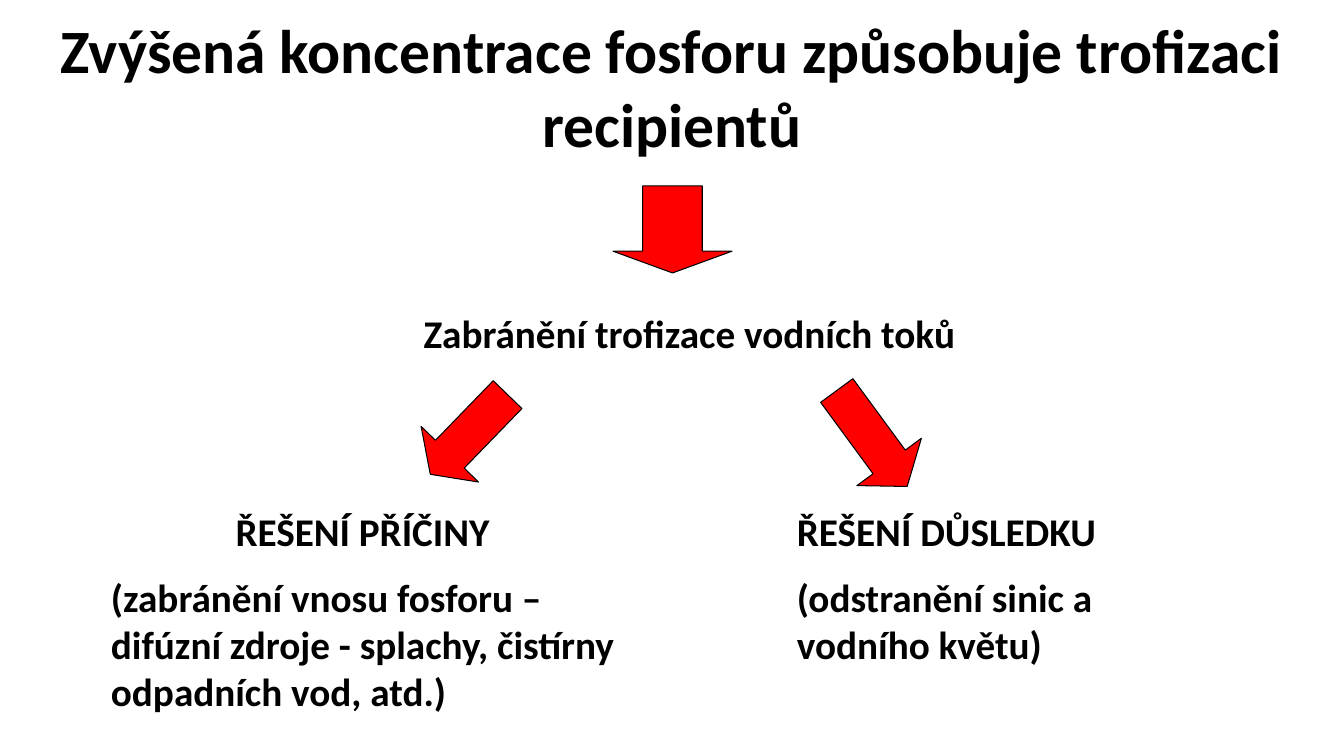
from dataclasses import dataclass

from pptx import Presentation
from pptx.dml.color import RGBColor
from pptx.enum.shapes import MSO_SHAPE as Shape
from pptx.enum.text import MSO_AUTO_SIZE as AutoSize, PP_ALIGN as Align
from pptx.util import Pt

EMU_PER_PX = 12192000 / 1344
SLIDE_SIZE = (1344, 756)


@dataclass(frozen=True)
class Theme:
    font: str = "Calibri"
    ink: RGBColor = RGBColor(0, 0, 0)
    arrow: RGBColor = RGBColor(255, 0, 0)
    outline: float = 0.75
    title: int = 44
    body: int = 28


THEME = Theme()
CENTER, LEFT = Align.CENTER, Align.LEFT

# Box (left, top, width, height) in px, type size, paragraphs with alignment
TEXTS = [
    ((0, 7, 1344, 159), THEME.title,
     [("Zvýšená koncentrace fosforu způsobuje trofizaci recipientů", CENTER)]),
    ((213, 304, 953, 57), THEME.body,
     [("Zabránění trofizace vodních toků", CENTER)]),
    ((101, 502, 523, 224), THEME.body,
     [("ŘEŠENÍ PŘÍČINY", CENTER),
      ("(zabránění vnosu fosforu – difúzní zdroje - splachy, "
       "čistírny odpadních vod, atd.)", LEFT)]),
    ((787, 502, 400, 176), THEME.body,
     [("ŘEŠENÍ DŮSLEDKU", LEFT),
      ("(odstranění sinic a vodního květu)", LEFT)]),
]

# Box in px, rotation in degrees, head length relative to the shorter side
ARROWS = [
    ((613, 186, 119, 87), 0, 0.25),
    ((429, 379, 80, 111), 44.1, 0.35),
    ((832, 379, 80, 119), 323.7, 0.38),
]


def px(*lengths):
    return [round(length * EMU_PER_PX) for length in lengths]


def add_text(slide, box, paragraphs, *, size, bold=True, color=THEME.ink):
    frame = slide.shapes.add_textbox(*px(*box)).text_frame
    frame.word_wrap = True
    frame.auto_size = AutoSize.SHAPE_TO_FIT_TEXT
    for index, (wording, align) in enumerate(paragraphs):
        paragraph = frame.add_paragraph() if index else frame.paragraphs[0]
        paragraph.alignment = align
        paragraph.space_before = Pt(size / 2 if index else 0)
        run = paragraph.add_run()
        run.text = wording
        run.font.name = THEME.font
        run.font.size = Pt(size)
        run.font.bold = bold
        run.font.color.rgb = color


def add_arrow(slide, box, rotation, head):
    arrow = slide.shapes.add_shape(Shape.DOWN_ARROW, *px(*box))
    arrow.adjustments[0] = 0.5
    arrow.adjustments[1] = head
    arrow.rotation = rotation
    arrow.shadow.inherit = False
    arrow.fill.solid()
    arrow.fill.fore_color.rgb = THEME.arrow
    arrow.line.color.rgb = THEME.ink
    arrow.line.width = Pt(THEME.outline)


def main():
    deck = Presentation()
    deck.slide_width, deck.slide_height = px(*SLIDE_SIZE)
    slide = deck.slides.add_slide(deck.slide_layouts[6])
    for box, size, paragraphs in TEXTS:
        add_text(slide, box, paragraphs, size=size)
    for box, rotation, head in ARROWS:
        add_arrow(slide, box, rotation, head)
    deck.save("out.pptx")


if __name__ == "__main__":
    main()
